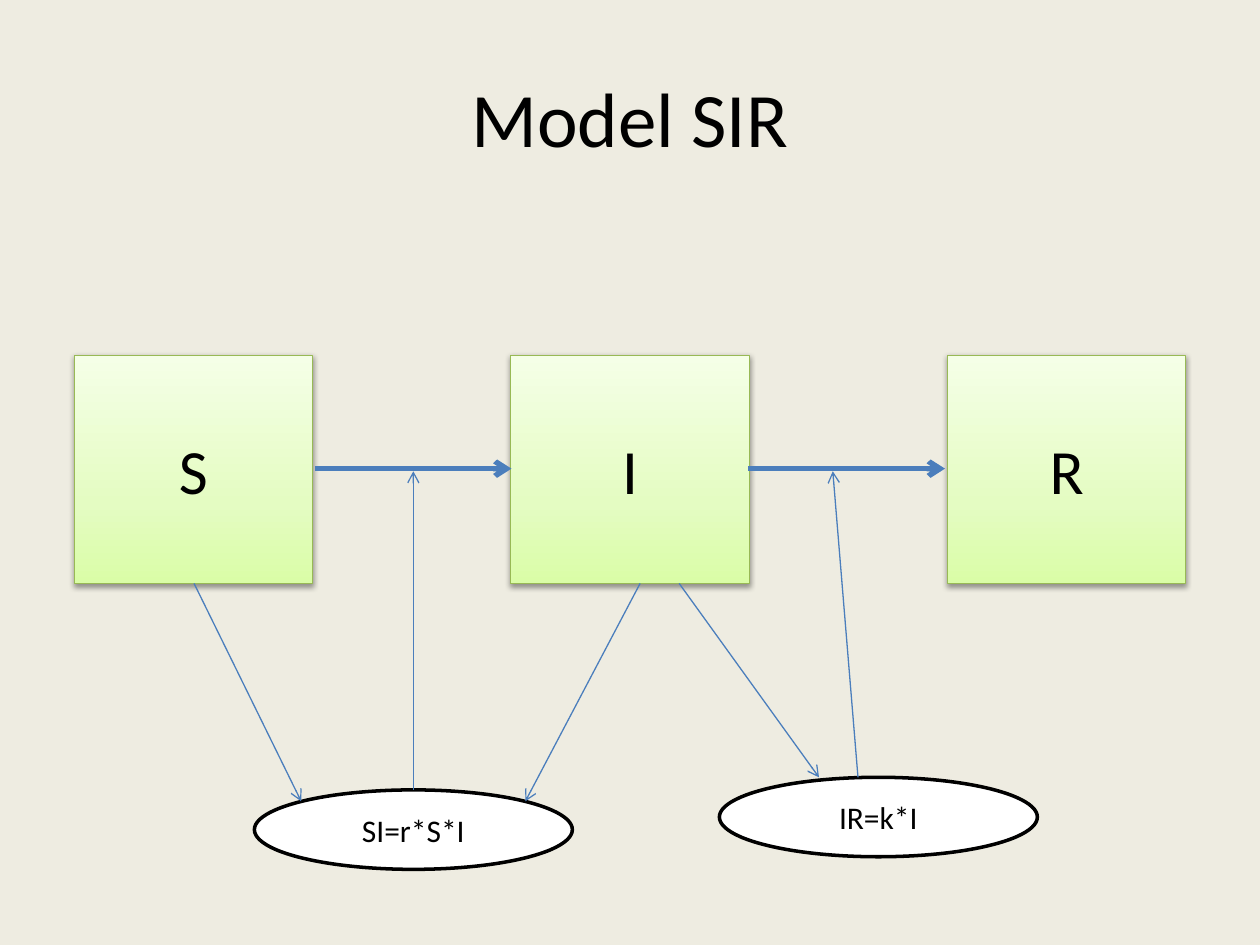
from copy import deepcopy
from lxml.etree import SubElement as Sub
from pptx import Presentation
from pptx.dml.color import RGBColor
from pptx.enum.shapes import MSO_CONNECTOR as Con, MSO_SHAPE as Geo
from pptx.enum.text import MSO_ANCHOR as Anchor, PP_ALIGN as Align
from pptx.oxml.ns import qn
from pptx.util import Pt

TITLE = "Model SIR"
STATES = ["S", "I", "R"]
RATES = [("SI=r*S*I", 145.4, 451.4), ("IR=k*I", 411.1, 444.2)]
FLOWS = [((180, 267.8), (292.3, 267.8)), ((427.7, 267.8), (540, 267.8))]
LINKS = [
    ((236.2, 451.4), (236.2, 269.3)),
    ((110.9, 333.4), (172.1, 457.9)),
    ((365.8, 333.4), (300.2, 457.9)),
    ((388.1, 333.4), (468, 444.2)),
    ((490.3, 444.2), (475.9, 269.3)),
]
STOPS = [(0, "DAFDA7"), (0.35, "E4FCC2"), (1, "F5FFE7")]
BLUE, GREEN, BLACK, WHITE = "4B7EBC", "98B955", "000000", "FFFFFF"
LEFT, TOP, STEP = 42.4, 203, 249.5
BOX_W, BOX_H = 136.2, 130.4
OVAL_W, OVAL_H = 181.7, 45.4


def rgb(code):
    return RGBColor.from_string(code)


def write(shape, text, size, color=BLACK, font="Calibri"):
    frame = shape.text_frame
    frame.word_wrap = True
    frame.vertical_anchor = Anchor.MIDDLE
    para = frame.paragraphs[0]
    para.alignment = Align.CENTER
    run = para.add_run()
    run.text = text
    run.font.size = Pt(size)
    run.font.name = font
    run.font.color.rgb = rgb(color)


def stroke(item, color, width):
    item.line.color.rgb = rgb(color)
    item.line.width = Pt(width)


def node(kind, box, text, size, color, width):
    shape = slide.shapes.add_shape(kind, *map(Pt, box))
    shape.shadow.inherit = False
    stroke(shape, color, width)
    write(shape, text, size)
    return shape


def shade(shape):
    fill = shape.fill
    fill.gradient()
    fill.gradient_angle = 90
    stops = shape._element.spPr.find(".//" + qn("a:gsLst"))
    stops.append(deepcopy(stops[0]))
    for stop, (pos, color) in zip(fill.gradient_stops, STOPS):
        stop.position = pos
        stop.color.rgb = rgb(color)


def drop(shape):
    effect = shape._element.spPr.find(qn("a:effectLst"))
    outer = Sub(effect, qn("a:outerShdw"), blurRad=str(Pt(3.1)),
                dist=str(Pt(1.6)), dir="5400000", rotWithShape="0")
    tint = Sub(outer, qn("a:srgbClr"), val=BLACK)
    Sub(tint, qn("a:alpha"), val="38000")


def arrow(start, end, width):
    line = slide.shapes.add_connector(Con.STRAIGHT, *map(Pt, start + end))
    stroke(line, BLUE, width)
    Sub(line.line._get_or_add_ln(), qn("a:tailEnd"), type="arrow")
    Sub(line._element.spPr, qn("a:effectLst"))


deck = Presentation()
deck.slide_width, deck.slide_height = Pt(720), Pt(540)
slide = deck.slides.add_slide(deck.slide_layouts[6])
back = slide.background.fill
back.solid()
back.fore_color.rgb = rgb("EEECE1")

head = slide.shapes.add_textbox(Pt(36), Pt(21.6), Pt(648), Pt(90))
write(head, TITLE, 44)

for i, name in enumerate(STATES):
    box = LEFT + i * STEP, TOP, BOX_W, BOX_H
    state = node(Geo.RECTANGLE, box, name, 36, GREEN, 0.75)
    shade(state)
    drop(state)

for name, x, y in RATES:
    oval = node(Geo.OVAL, (x, y, OVAL_W, OVAL_H), name, 18, BLACK, 2)
    oval.fill.solid()
    oval.fill.fore_color.rgb = rgb(WHITE)

for group, width in ((FLOWS, 3), (LINKS, 0.75)):
    for start, end in group:
        arrow(start, end, width)

deck.save("out.pptx")
